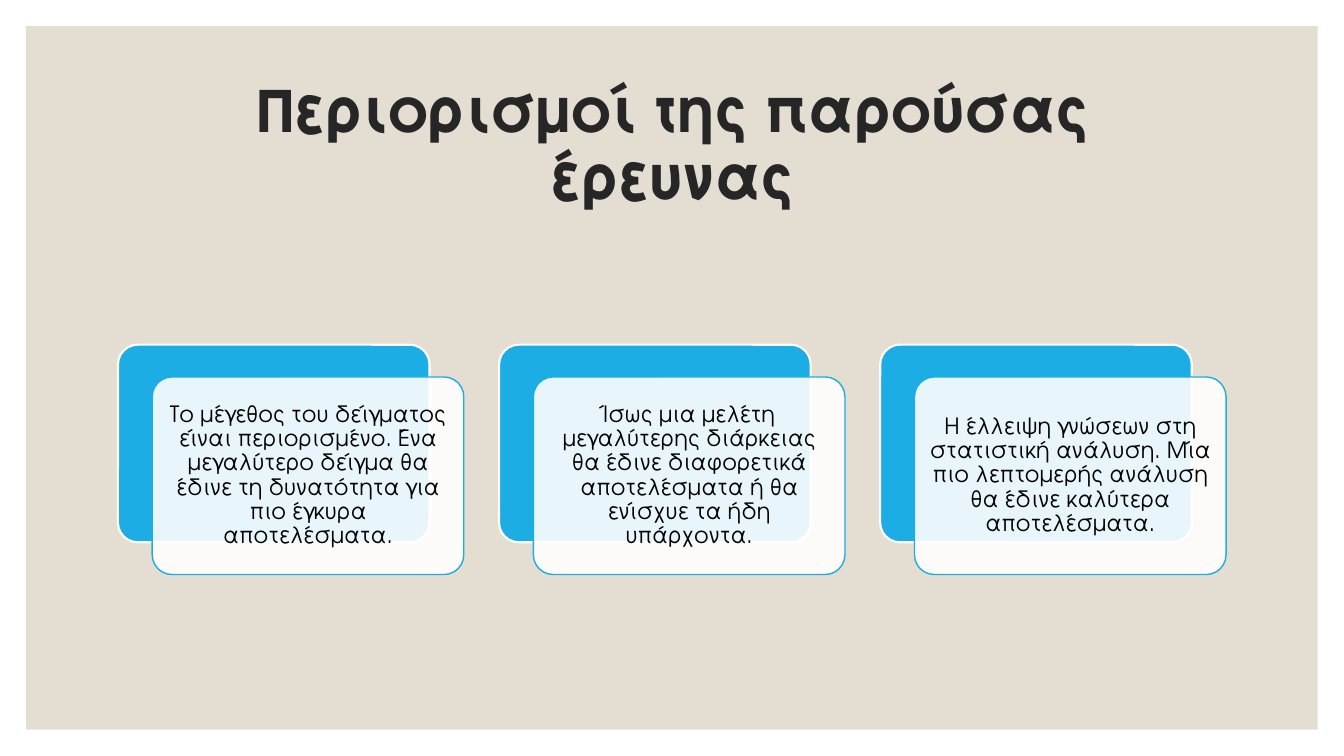
from dataclasses import dataclass

from lxml import etree
from pptx import Presentation
from pptx import util as u
from pptx.dml.color import RGBColor
from pptx.enum import shapes, text
from pptx.oxml.ns import qn

HEADING = "Περιορισμοί της παρούσας έρευνας"
LIMITATIONS = [
    "Το μέγεθος του δείγματος είναι περιορισμένο. Ένα μεγαλύτερο δείγμα θα "
    "έδινε τη δυνατότητα για πιο έγκυρα αποτελέσματα.",
    "Ίσως μια μελέτη μεγαλύτερης διάρκειας θα έδινε διαφορετικά αποτελέσματα "
    "ή θα ενίσχυε τα ήδη υπάρχοντα.",
    "Η έλλειψη γνώσεων στη στατιστική ανάλυση. Μία πιο λεπτομερής ανάλυση "
    "θα έδινε καλύτερα αποτελέσματα.",
]


@dataclass(frozen=True)
class Theme:
    font: str = "TeX Gyre Adventor"
    panel: str = "E3DED1"
    accent: str = "1CADE4"
    white: str = "FFFFFF"
    heading: str = "262626"
    body: str = "000000"
    heading_size: int = 44
    body_size: int = 16
    card_opacity: int = 90


THEME = Theme()
SLIDE_W, SLIDE_H = 13.33, 7.5
MARGIN = 0.26
TITLE_BOX = (1.17, 0.7, 11, 1.5)
CARD_LEFT, CARD_TOP = 1.17, 3.42
CARD_W, CARD_H = 3.09, 1.96
COLUMN_STEP = 3.78
FRONT_DX, FRONT_DY = 0.34, 0.32


def add_block(slide, kind, box, fill, line=None, line_width=1):
    block = slide.shapes.add_shape(kind, *map(u.Inches, box))
    block.shadow.inherit = False
    block.fill.solid()
    block.fill.fore_color.rgb = RGBColor.from_string(fill)
    if line:
        block.line.color.rgb = RGBColor.from_string(line)
        block.line.width = u.Pt(line_width)
    else:
        block.line.fill.background()
    return block


def add_card(slide, box, fill, line, line_width):
    card = add_block(slide, shapes.MSO_SHAPE.ROUNDED_RECTANGLE, box, fill, line, line_width)
    card.adjustments[0] = 0.1
    return card


def set_opacity(shape, percent):
    color = shape.element.spPr.find(qn("a:solidFill"))[0]
    etree.SubElement(color, qn("a:alpha"), val=str(percent * 1000))


def write(shape, wording, inset, size, color, bold=False):
    frame = shape.text_frame
    frame.text = wording
    sides = ("left", "top", "right", "bottom")
    frame_format = {
        "word_wrap": True,
        "auto_size": text.MSO_AUTO_SIZE.NONE,
        "vertical_anchor": text.MSO_ANCHOR.MIDDLE,
        **{f"margin_{side}": u.Inches(inset) for side in sides},
    }
    paragraph = frame.paragraphs[0]
    font = paragraph.runs[0].font
    formats = [
        (frame, frame_format),
        (paragraph, {"alignment": text.PP_ALIGN.CENTER, "line_spacing": 0.9}),
        (font, {"name": THEME.font, "size": u.Pt(size), "bold": bold}),
    ]
    for target, values in formats:
        for name, value in values.items():
            setattr(target, name, value)
    font.color.rgb = RGBColor.from_string(color)


def main():
    deck = Presentation()
    deck.slide_width, deck.slide_height = u.Inches(SLIDE_W), u.Inches(SLIDE_H)
    slide = deck.slides.add_slide(deck.slide_layouts[5])

    heading = slide.shapes.title
    heading.left, heading.top, heading.width, heading.height = map(u.Inches, TITLE_BOX)
    write(heading, HEADING, 0.15, THEME.heading_size, THEME.heading, bold=True)

    panel_box = (MARGIN, MARGIN, SLIDE_W - 2 * MARGIN, SLIDE_H - 2 * MARGIN)
    panel = add_block(slide, shapes.MSO_SHAPE.RECTANGLE, panel_box, THEME.panel)
    heading.element.addprevious(panel.element)

    for column, limitation in enumerate(LIMITATIONS):
        left = CARD_LEFT + column * COLUMN_STEP
        add_card(slide, (left, CARD_TOP, CARD_W, CARD_H), THEME.accent, THEME.white, 1.5)
        front_box = (left + FRONT_DX, CARD_TOP + FRONT_DY, CARD_W, CARD_H)
        front = add_card(slide, front_box, THEME.white, THEME.accent, 1)
        set_opacity(front, THEME.card_opacity)
        write(front, limitation, 0.07, THEME.body_size, THEME.body)

    deck.save("out.pptx")


if __name__ == "__main__":
    main()
